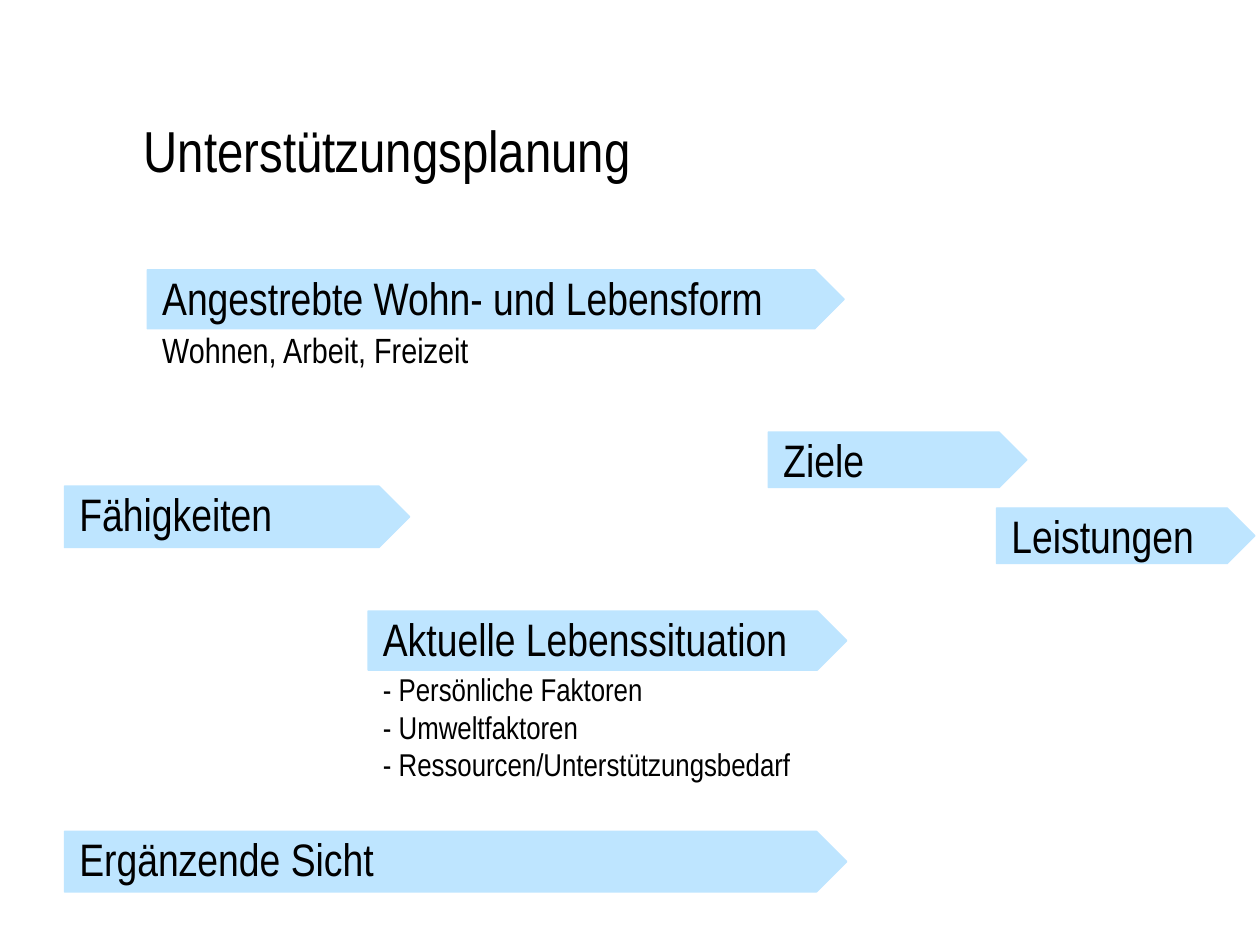
from pptx import Presentation
from pptx.dml.color import RGBColor
from pptx.enum.shapes import MSO_SHAPE
from pptx.enum.text import MSO_ANCHOR, PP_ALIGN
from pptx.util import Cm, Pt

COLORS = {"arrow": "BEE5FF", "text": "000000"}
FONT = "Arial Narrow"
TITLE_SIZE, HEADING_SIZE = 33, 26
ARROW_INSET = 0.3

# heading, left, top, width, height (cm), details, detail size
ARROWS = [
    ("Fähigkeiten", 1.3, 9.8, 6.96, 1.24, [], None),
    ("Angestrebte Wohn- und Lebensform", 2.97, 5.44, 14.05, 1.19,
     ["Wohnen, Arbeit, Freizeit"], 20),
    ("Aktuelle Lebenssituation", 7.42, 12.32, 9.65, 1.19,
     ["- Persönliche Faktoren", "- Umweltfaktoren",
      "- Ressourcen/Unterstützungsbedarf"], 18),
    ("Ergänzende Sicht", 1.3, 16.76, 15.77, 1.22, [], None),
    ("Ziele", 15.49, 8.71, 5.21, 1.12, [], None),
    ("Leistungen", 20.09, 10.24, 5.21, 1.12, [], None),
]


class SlideBuilder:
    def __init__(self, presentation):
        self.slide = presentation.slides.add_slide(presentation.slide_layouts[6])

    def color(self, name):
        return RGBColor.from_string(COLORS[name])

    def prepare_frame(self, shape, inset, wrap):
        frame = shape.text_frame
        frame.margin_left = Cm(inset)
        frame.margin_top = frame.margin_right = frame.margin_bottom = 0
        frame.vertical_anchor = MSO_ANCHOR.TOP
        frame.word_wrap = wrap
        return frame

    def format_paragraph(self, paragraph, size):
        paragraph.alignment = PP_ALIGN.LEFT
        for run in paragraph.runs:
            run.font.name = FONT
            run.font.size = Pt(size)
            run.font.color.rgb = self.color("text")

    def title(self, text, left, top, width, height):
        shape = self.slide.shapes.add_textbox(Cm(left), Cm(top), Cm(width), Cm(height))
        frame = self.prepare_frame(shape, 0, True)
        frame.text = text
        self.format_paragraph(frame.paragraphs[0], TITLE_SIZE)

    def arrow(self, heading, left, top, width, height, details, detail_size):
        """Add a pentagon arrow whose details run on below its heading."""
        shape = self.slide.shapes.add_shape(
            MSO_SHAPE.PENTAGON, Cm(left), Cm(top), Cm(width), Cm(height))
        shape.shadow.inherit = False
        shape.fill.solid()
        shape.fill.fore_color.rgb = self.color("arrow")
        shape.line.color.rgb = self.color("arrow")
        shape.line.width = Pt(0.75)
        frame = self.prepare_frame(shape, ARROW_INSET, False)
        frame.text = "\n".join([heading, *details])
        for index, paragraph in enumerate(frame.paragraphs):
            self.format_paragraph(paragraph, detail_size if index else HEADING_SIZE)
        if details:
            frame.paragraphs[1].space_before = Pt(2.4)


def main():
    presentation = Presentation()
    presentation.slide_width = Cm(25.4)
    presentation.slide_height = Cm(19.05)
    builder = SlideBuilder(presentation)
    builder.title("Unterstützungsplanung", 2.9, 2.31, 21.62, 1.8)
    for arrow in ARROWS:
        builder.arrow(*arrow)
    presentation.save("out.pptx")


if __name__ == "__main__":
    main()
